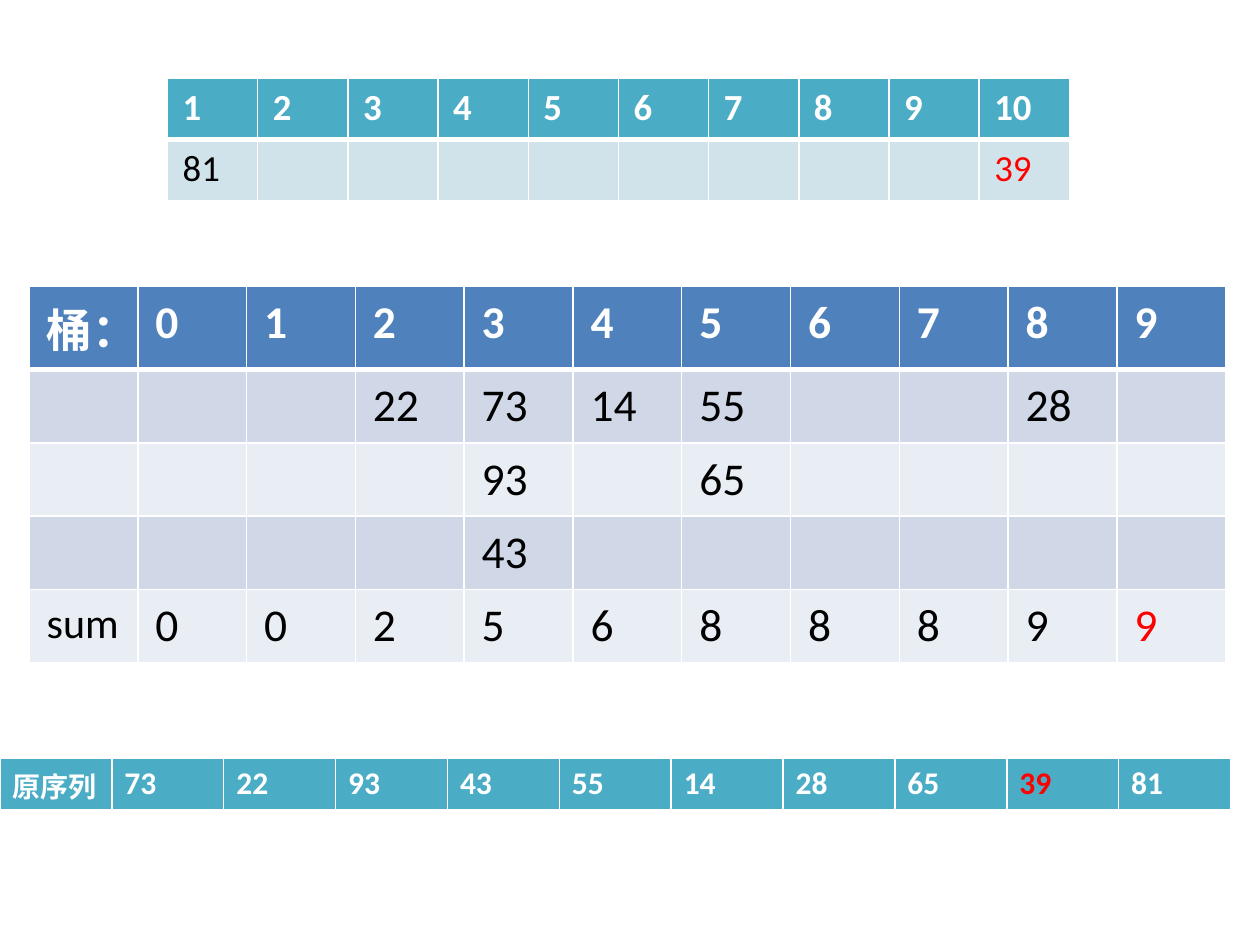
import pptx
import pptx.dml.color
import pptx.oxml
import pptx.oxml.ns
import pptx.util
from pptx.util import Inches

THEME = {
    "font": "Calibri", "white": "FFFFFF", "black": "000000", "red": "FF0000",
    "blue": "4F81BD", "blue_bands": ["D0D8E8", "E9EDF4"],
    "teal": "4BACC6", "teal_bands": ["D0E3EA"],
    "count_size": 21, "bucket_size": 26, "sum_size": 24,
    "sequence_size": 18, "sequence_label_size": 16,
    "thin": 1, "thick": 3,
}


def add_border(cell, side, width):
    namespace = pptx.oxml.ns.nsdecls("a")
    cell._tc.get_or_add_tcPr().append(pptx.oxml.parse_xml(
        f'<a:ln{side} {namespace} w="{pptx.util.Pt(width)}"><a:solidFill>'
        f'<a:srgbClr val="{THEME["white"]}"/></a:solidFill></a:ln{side}>'))


presentation = pptx.Presentation()
presentation.slide_width = Inches(10)
presentation.slide_height = Inches(7.5)
slide = presentation.slides.add_slide(presentation.slide_layouts[6])

tables = [
    {
        "box": (0.23, 2.27, 9.5, 2.89), "inset": (0.14, 0.07),
        "header": THEME["blue"], "bands": THEME["blue_bands"],
        "size": THEME["bucket_size"], "special_sizes": {(4, 0): THEME["sum_size"]},
        "red_cell": (4, 10),
        "rows": [
            ["桶：", *range(10)],
            ["", "", "", 22, 73, 14, 55, "", "", 28, ""],
            ["", "", "", "", 93, "", 65, "", "", "", ""],
            ["", "", "", "", 43, "", "", "", "", "", ""],
            ["sum", 0, 0, 2, 5, 6, 8, 8, 8, 9, 9],
        ],
    },
    {
        "box": (1.33, 0.62, 7.16, 0.97), "inset": (0.12, 0.06),
        "header": THEME["teal"], "bands": THEME["teal_bands"],
        "size": THEME["count_size"], "special_sizes": {}, "red_cell": (1, 9),
        "rows": [[*range(1, 11)], [81, *[""] * 8, 39]],
    },
    {
        "box": (0, 6.02, 9.77, 0.41), "inset": (0.1, 0.05),
        "header": THEME["teal"], "bands": [],
        "size": THEME["sequence_size"],
        "special_sizes": {(0, 0): THEME["sequence_label_size"]}, "red_cell": (0, 9),
        "rows": [["原序列", 73, 22, 93, 43, 55, 14, 28, 65, 39, 81]],
    },
]

for design in tables:
    rows = design["rows"]
    left, top, width, height = design["box"]
    table = slide.shapes.add_table(
        len(rows), len(rows[0]), Inches(left), Inches(top), Inches(width), Inches(height)).table
    for column in table.columns:
        column.width = Inches(width / len(rows[0]))
    for row in table.rows:
        row.height = Inches(height / len(rows))
    for row_index, values in enumerate(rows):
        is_header = row_index == 0
        bands = design["bands"]
        fill = design["header"] if is_header else bands[(row_index - 1) % len(bands)]
        for column_index, value in enumerate(values):
            position = (row_index, column_index)
            cell = table.cell(*position)
            for side, width_points in {
                "L": THEME["thin"], "R": THEME["thin"],
                "T": THEME["thick"] if row_index == 1 else THEME["thin"],
                "B": THEME["thick"] if is_header else THEME["thin"],
            }.items():
                add_border(cell, side, width_points)
            cell.fill.solid()
            cell.fill.fore_color.rgb = pptx.dml.color.RGBColor.from_string(fill)
            if value == "":
                continue
            across, down = design["inset"]
            for name, inset in {"margin_left": across, "margin_right": across,
                                "margin_top": down, "margin_bottom": down}.items():
                setattr(cell, name, Inches(inset))
            run = cell.text_frame.paragraphs[0].add_run()
            run.text = str(value)
            size = design["special_sizes"].get(position, design["size"])
            for name, setting in {"name": THEME["font"], "size": pptx.util.Pt(size),
                                  "bold": is_header}.items():
                setattr(run.font, name, setting)
            color = THEME["white"] if is_header else THEME["black"]
            if position == design["red_cell"]:
                color = THEME["red"]
            run.font.color.rgb = pptx.dml.color.RGBColor.from_string(color)

presentation.save("out.pptx")
